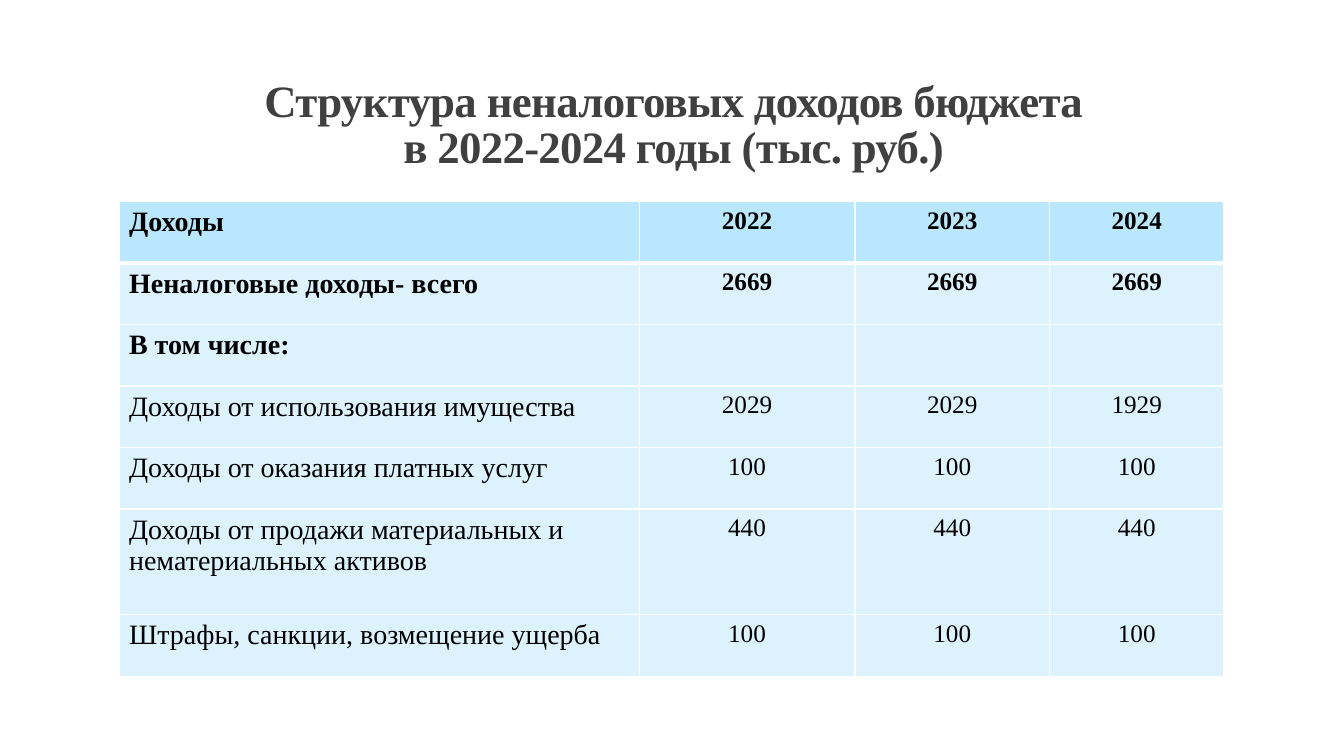
"""Builds a slide with a table of non-tax budget revenues for 2022-2024."""
import pptx
import pptx.dml.color
import pptx.enum.text
import pptx.oxml
import pptx.oxml.ns
import pptx.util
from pptx.util import Inches

COLORS = {"title": "404040", "text": "000000", "header": "B9E7FD", "body": "DCF3FE", "border": "FFFFFF"}
ALIGN = pptx.enum.text.PP_ALIGN


def write(frame, text, size=18, color="text", bold=False, align=ALIGN.CENTER, line_spacing=None, tracking=None):
    frame.text = text
    paragraph = frame.paragraphs[0]
    paragraph.alignment = align
    if line_spacing:
        paragraph.line_spacing = line_spacing
    for run in paragraph.runs:
        run.font.name = "Times New Roman"
        run.font.size = pptx.util.Pt(size)
        run.font.bold = bold
        run.font.color.rgb = pptx.dml.color.RGBColor.from_string(COLORS[color])
        if tracking:
            run.font._element.set("spc", str(tracking))


def add_borders(cell, widths):
    for side, width in widths.items():
        cell._tc.get_or_add_tcPr().append(pptx.oxml.parse_xml(
            f'<a:ln{side} {pptx.oxml.ns.nsdecls("a")} w="{pptx.util.Pt(width)}"><a:solidFill>'
            f'<a:srgbClr val="{COLORS["border"]}"/></a:solidFill></a:ln{side}>'))


deck = pptx.Presentation()
deck.slide_width, deck.slide_height = Inches(13.33), Inches(7.5)
slide = deck.slides.add_slide(deck.slide_layouts[5])

heading = slide.shapes.title
heading.left, heading.top, heading.width, heading.height = Inches(1.18), Inches(0.17), Inches(11), Inches(1.59)
heading.text_frame.word_wrap = True
heading.text_frame.auto_size = pptx.enum.text.MSO_AUTO_SIZE.NONE
heading.text_frame.vertical_anchor = pptx.enum.text.MSO_ANCHOR.BOTTOM
write(heading.text_frame, "Структура неналоговых доходов бюджета\vв 2022-2024 годы (тыс. руб.)",
      size=32, color="title", bold=True, line_spacing=0.85, tracking=-50)

revenues = [
    ("Доходы", "2022", "2023", "2024"),
    ("Неналоговые доходы- всего", "2669", "2669", "2669"),
    ("В том числе:", "", "", ""),
    ("Доходы от использования имущества", "2029", "2029", "1929"),
    ("Доходы от оказания платных услуг", "100", "100", "100"),
    ("Доходы от продажи материальных и нематериальных активов", "440", "440", "440"),
    ("Штрафы, санкции, возмещение ущерба", "100", "100", "100"),
]
column_widths = [5.16, 2.14, 1.93, 1.73]
row_heights = [0.61] * 5 + [1.05, 0.61]
bold_rows = 3

revenue_table = slide.shapes.add_table(
    len(revenues), len(column_widths), Inches(1.18), Inches(2),
    Inches(sum(column_widths)), Inches(sum(row_heights))).table
for column, width in zip(revenue_table.columns, column_widths):
    column.width = Inches(width)

for r, (values, height) in enumerate(zip(revenues, row_heights)):
    revenue_table.rows[r].height = Inches(height)
    for c, value in enumerate(values):
        cell = revenue_table.cell(r, c)
        write(cell.text_frame, value, size=18 if c else 20, bold=r < bold_rows,
              align=ALIGN.CENTER if c else ALIGN.LEFT)
        add_borders(cell, {"L": 1, "R": 1, "T": 3 if r == 1 else 1, "B": 3 if r == 0 else 1})
        cell.fill.solid()
        cell.fill.fore_color.rgb = pptx.dml.color.RGBColor.from_string(COLORS["body" if r else "header"])

deck.save("out.pptx")
